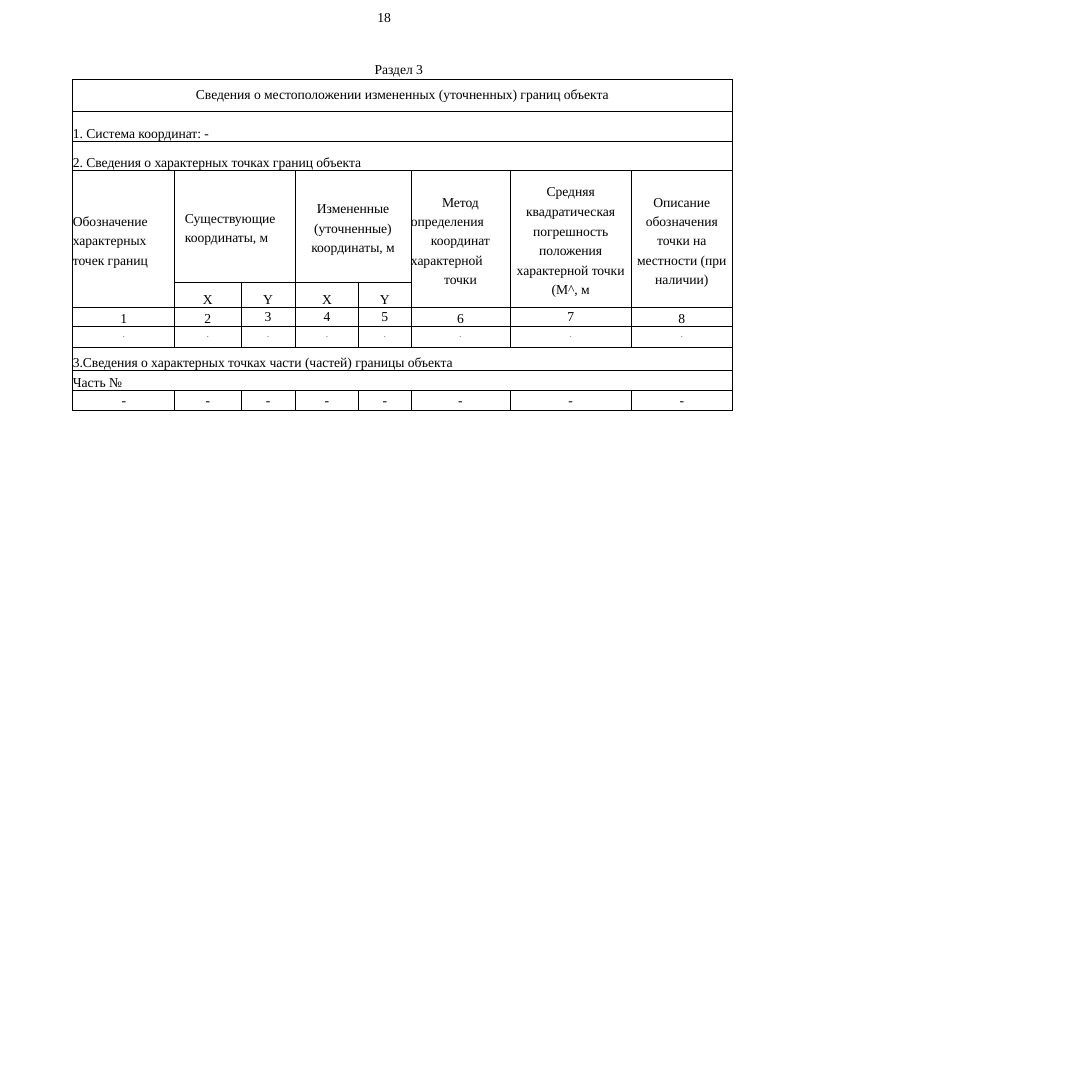
from lxml.etree import SubElement
from pptx import Presentation
from pptx.dml.color import RGBColor
from pptx.enum.text import MSO_ANCHOR, PP_ALIGN
from pptx.oxml.ns import qn
from pptx.util import Inches, Pt

INK = "000000"
LEFT, CENTER, JUSTIFY = PP_ALIGN.LEFT, PP_ALIGN.CENTER, PP_ALIGN.JUSTIFY
MIDDLE, BOTTOM = MSO_ANCHOR.MIDDLE, MSO_ANCHOR.BOTTOM

COLUMNS = [1.09, 0.71, 0.58, 0.68, 0.56, 1.06, 1.3, 1.08]
ROWS = [0.34, 0.32, 0.32, 1.19, 0.27, 0.21, 0.22, 0.25, 0.21, 0.22]

# Full-width rows: row, text, alignment, anchor
BANDS = [
    (0, "Сведения о местоположении измененных (уточненных) границ объекта", CENTER, MIDDLE),
    (1, "1. Система координат: -", LEFT, BOTTOM),
    (2, "2. Сведения о характерных точках границ объекта", LEFT, BOTTOM),
    (7, "3.Сведения о характерных точках части (частей) границы объекта", LEFT, BOTTOM),
    (8, "Часть №", LEFT, BOTTOM),
]
# Column headings: column, row span, column span, text, alignment, line spacing
HEADINGS = [
    (0, 2, 1, "Обозначение характерных точек границ", JUSTIFY, 15.1),
    (1, 1, 2, "Существующие координаты, м", JUSTIFY, 14.9),
    (3, 1, 2, "Измененные (уточненные) координаты, м", CENTER, 15.1),
    (5, 2, 1, "Метод\nопределения\nкоординат\nхарактерной\nточки", CENTER, 14.9),
    (6, 2, 1, "Средняя квадратическая погрешность положения характерной точки (М^, м",
     CENTER, 15.1),
    (7, 2, 1, "Описание обозначения точки на местности (при наличии)", CENTER, 14.9),
]


def style(frame, align, size=10.5, italic=False, spacing=None):
    """Format every paragraph and run of a text frame."""
    for para in frame.paragraphs:
        para.alignment = align
        if spacing:
            para.line_spacing = Pt(spacing)
        for span in para.runs:
            span.font.name = "Times New Roman"
            span.font.size = Pt(size)
            span.font.italic = italic
            span.font.color.rgb = RGBColor.from_string(INK)


def write(row, column, text, align=CENTER, anchor=MIDDLE, **look):
    cell = table.cell(row, column)
    cell.text_frame.text = text
    cell.vertical_anchor = anchor
    style(cell.text_frame, align, **look)


deck = Presentation()
deck.slide_width = deck.slide_height = Inches(11.69)
page = deck.slides.add_slide(deck.slide_layouts[6])

for left, top, width, text in [(4.04, 0.1, 0.19, "18"), (4.01, 0.65, 0.62, "Раздел 3")]:
    box = page.shapes.add_textbox(Inches(left), Inches(top), Inches(width), Inches(0.17))
    frame = box.text_frame
    frame.margin_left = frame.margin_right = frame.margin_top = frame.margin_bottom = 0
    frame.word_wrap = False
    frame.text = text
    style(frame, LEFT)

table = page.shapes.add_table(
    len(ROWS), len(COLUMNS), Inches(0.78), Inches(0.85),
    Inches(sum(COLUMNS)), Inches(sum(ROWS))).table
table.first_row = table.horz_banding = False
for column, width in zip(table.columns, COLUMNS):
    column.width = Inches(width)
for row, height in zip(table.rows, ROWS):
    row.height = Inches(height)

for cell in table.iter_cells():
    cell.margin_left = cell.margin_right = cell.margin_top = cell.margin_bottom = 0
    properties = cell._tc.get_or_add_tcPr()
    for side in ("a:lnL", "a:lnR", "a:lnT", "a:lnB"):
        border = SubElement(properties, qn(side), w=str(Pt(0.75)))
        fill = SubElement(border, qn("a:solidFill"))
        SubElement(fill, qn("a:srgbClr"), val=INK)
    cell.fill.background()

for row, text, align, anchor in BANDS:
    table.cell(row, 0).merge(table.cell(row, len(COLUMNS) - 1))
    write(row, 0, text, align, anchor)

for column, down, across, text, align, spacing in HEADINGS:
    table.cell(3, column).merge(table.cell(2 + down, column + across - 1))
    write(3, column, text, align, spacing=spacing)
existing = table.cell(3, 1).text_frame.paragraphs[0]
existing._p.get_or_add_pPr().set("marL", str(Inches(0.11)))
for line in (1, 3):
    table.cell(3, 5).text_frame.paragraphs[line].alignment = LEFT

for column, axis in enumerate("XYXY", start=1):
    write(4, column, axis, anchor=BOTTOM)

for column in range(len(COLUMNS)):
    number = column + 1
    write(5, column, str(number), anchor=MIDDLE if number in (3, 4, 5, 7) else BOTTOM)
    write(6, column, "-", size=4, italic=True)
    write(9, column, "-")

deck.save("out.pptx")
